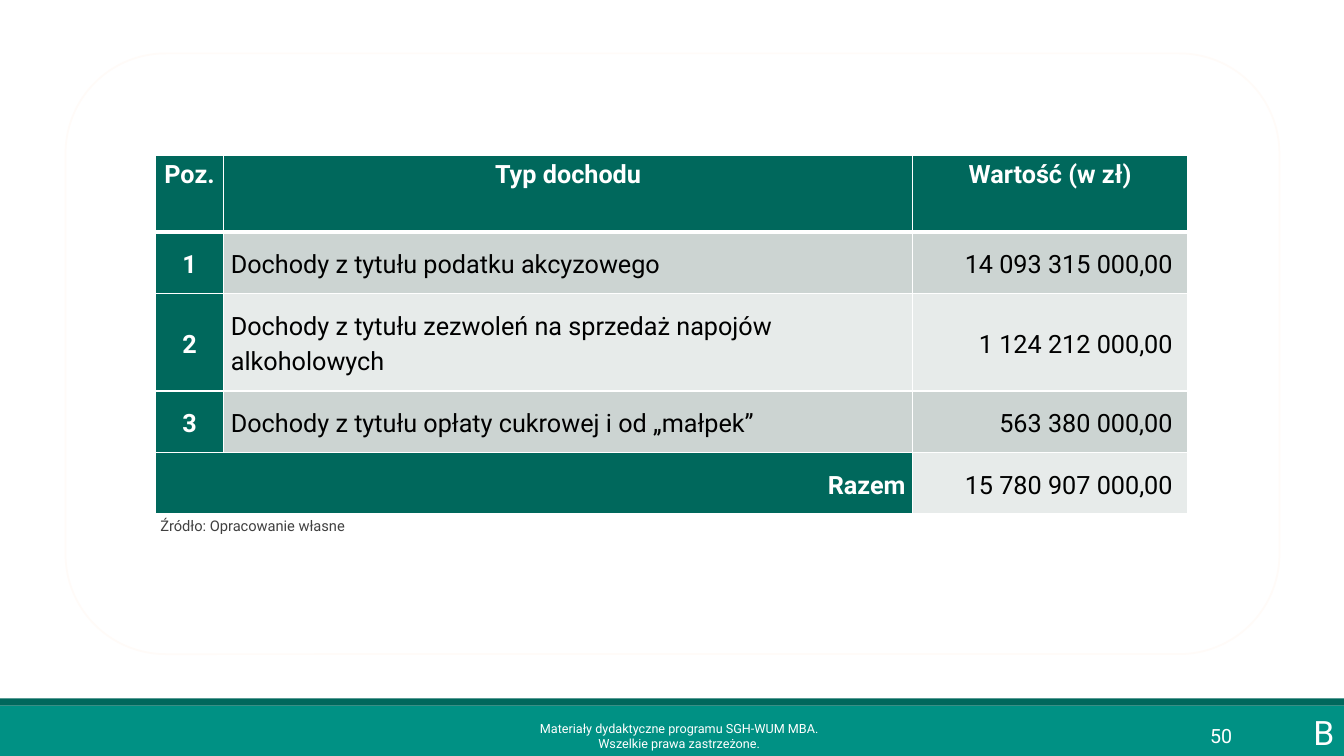
from lxml import etree
from pptx import Presentation
from pptx import util as u
from pptx.dml.color import RGBColor
from pptx.enum import shapes, text
from pptx.oxml import ns

FONT = "Roboto"
WHITE, BLACK, GREY = "FFFFFF", "000000", "404040"
TEAL, DARK_TEAL = "009184", "00685C"
BANDS = ["CCD4D2", "E7EBEA"]
LEFT, CENTER, RIGHT = text.PP_ALIGN.LEFT, text.PP_ALIGN.CENTER, text.PP_ALIGN.RIGHT
MIDDLE, TOP = text.MSO_ANCHOR.MIDDLE, text.MSO_ANCHOR.TOP

HEADINGS = ["Poz.", "Typ dochodu", "Wartość (w zł)"]
INCOMES = [
    ("1", "Dochody z tytułu podatku akcyzowego", "14 093 315 000,00"),
    ("2", "Dochody z tytułu zezwoleń na sprzedaż napojów alkoholowych", "1 124 212 000,00"),
    ("3", "Dochody z tytułu opłaty cukrowej i od „małpek”", "563 380 000,00"),
]
TOTAL = ("Razem", "15 780 907 000,00")
COLUMN_WIDTHS = [0.68, 6.83, 2.73]
ROW_HEIGHTS = [0.76, 0.61, 0.97, 0.61, 0.61]


def color(value):
    return RGBColor.from_string(value)


def add_span(para, content, size, shade, bold=False):
    span = para.add_run()
    span.text = content
    span.font.name = FONT
    span.font.size = u.Pt(size)
    span.font.bold = bold
    span.font.color.rgb = color(shade)


def add_panel(page, kind, left, top, width, height, fill, line=None):
    panel = page.shapes.add_shape(kind, *map(u.Inches, (left, top, width, height)))
    panel.shadow.inherit = False
    panel.fill.solid()
    panel.fill.fore_color.rgb = color(fill)
    if line:
        panel.line.color.rgb = color(line)
        panel.line.width = u.Pt(1.25)
    else:
        panel.line.fill.background()


def add_label(page, left, top, width, height, lines, size, align,
              shade=WHITE, anchor=MIDDLE, side=0.1):
    box = page.shapes.add_textbox(*map(u.Inches, (left, top, width, height)))
    frame = box.text_frame
    frame.word_wrap = True
    frame.vertical_anchor = anchor
    frame.margin_left = frame.margin_right = u.Inches(side)
    para = frame.paragraphs[0]
    para.alignment = align
    for index, line in enumerate(lines):
        if index:
            para.add_line_break()
        add_span(para, line, size, shade)
    return para


def set_borders(cell, top, bottom):
    properties = cell._tc.get_or_add_tcPr()
    for side, points in (("L", 1), ("R", 1), ("T", top), ("B", bottom)):
        line = etree.SubElement(properties, ns.qn(f"a:ln{side}"), w=str(u.Pt(points)))
        fill = etree.SubElement(line, ns.qn("a:solidFill"))
        etree.SubElement(fill, ns.qn("a:srgbClr"), val=WHITE)


def fill_cell(cell, content, align, fill, header=False, right=0.07):
    on_dark = fill == DARK_TEAL
    cell.fill.solid()
    cell.fill.fore_color.rgb = color(fill)
    cell.margin_left, cell.margin_right = u.Inches(0.07), u.Inches(right)
    cell.margin_top = cell.margin_bottom = 0
    cell.vertical_anchor = TOP if header else MIDDLE
    para = cell.text_frame.paragraphs[0]
    para.alignment = align
    para.line_spacing = 1.16
    para.space_after = u.Pt(8)
    add_span(para, content, 18, WHITE if on_dark else BLACK, on_dark)


def add_income_table(page):
    frame = page.shapes.add_table(
        len(ROW_HEIGHTS), len(COLUMN_WIDTHS), u.Inches(1.54), u.Inches(1.54),
        u.Inches(sum(COLUMN_WIDTHS)), u.Inches(sum(ROW_HEIGHTS)))
    table = frame.table
    for column, width in zip(table.columns, COLUMN_WIDTHS):
        column.width = u.Inches(width)
    for index, (row, height) in enumerate(zip(table.rows, ROW_HEIGHTS)):
        row.height = u.Inches(height)
        for cell in row.cells:
            set_borders(cell, 3 if index == 1 else 1, 3 if index == 0 else 1)

    # Heading row
    for column, heading in enumerate(HEADINGS):
        fill_cell(table.cell(0, column), heading, CENTER, DARK_TEAL, header=True)

    # Income rows
    for index, (number, name, amount) in enumerate(INCOMES):
        band = BANDS[index % 2]
        fill_cell(table.cell(index + 1, 0), number, CENTER, DARK_TEAL)
        fill_cell(table.cell(index + 1, 1), name, LEFT, band)
        fill_cell(table.cell(index + 1, 2), amount, RIGHT, band, right=0.15)

    # Total row
    last = len(ROW_HEIGHTS) - 1
    table.cell(last, 0).merge(table.cell(last, 1))
    fill_cell(table.cell(last, 0), TOTAL[0], RIGHT, DARK_TEAL)
    fill_cell(table.cell(last, 2), TOTAL[1], RIGHT, BANDS[1], right=0.15)


def main():
    deck = Presentation()
    deck.slide_width, deck.slide_height = u.Inches(13.33), u.Inches(7.5)
    page = deck.slides.add_slide(deck.slide_layouts[6])

    # Footer bands and content frame
    kinds = shapes.MSO_SHAPE
    add_panel(page, kinds.RECTANGLE, 0, 7, 13.33, 0.5, TEAL)
    add_panel(page, kinds.RECTANGLE, 0, 6.93, 13.33, 0.07, DARK_TEAL)
    add_panel(page, kinds.ROUNDED_RECTANGLE, 0.65, 0.53, 12.04, 5.96, WHITE, "FFFBF8")

    add_income_table(page)

    # Footer text
    add_label(page, 4.1, 7.1, 5.27, 0.4,
              ["Materiały dydaktyczne programu SGH-WUM MBA.", "Wszelkie prawa zastrzeżone."],
              9, CENTER)
    add_label(page, 10.89, 7.1, 1.43, 0.4, ["50"], 14, RIGHT)
    add_label(page, 12.93, 7.01, 0.4, 0.5, ["B"], 24, CENTER, anchor=TOP, side=0)

    # Source note under the table
    note = add_label(page, 1.59, 5.1, 11.54, 0.4, ["Źródło: Opracowanie własne"],
                     10.5, LEFT, GREY, TOP, side=0)
    note.line_spacing = 0.9
    note.space_after = u.Pt(2)

    deck.save("out.pptx")


if __name__ == "__main__":
    main()
